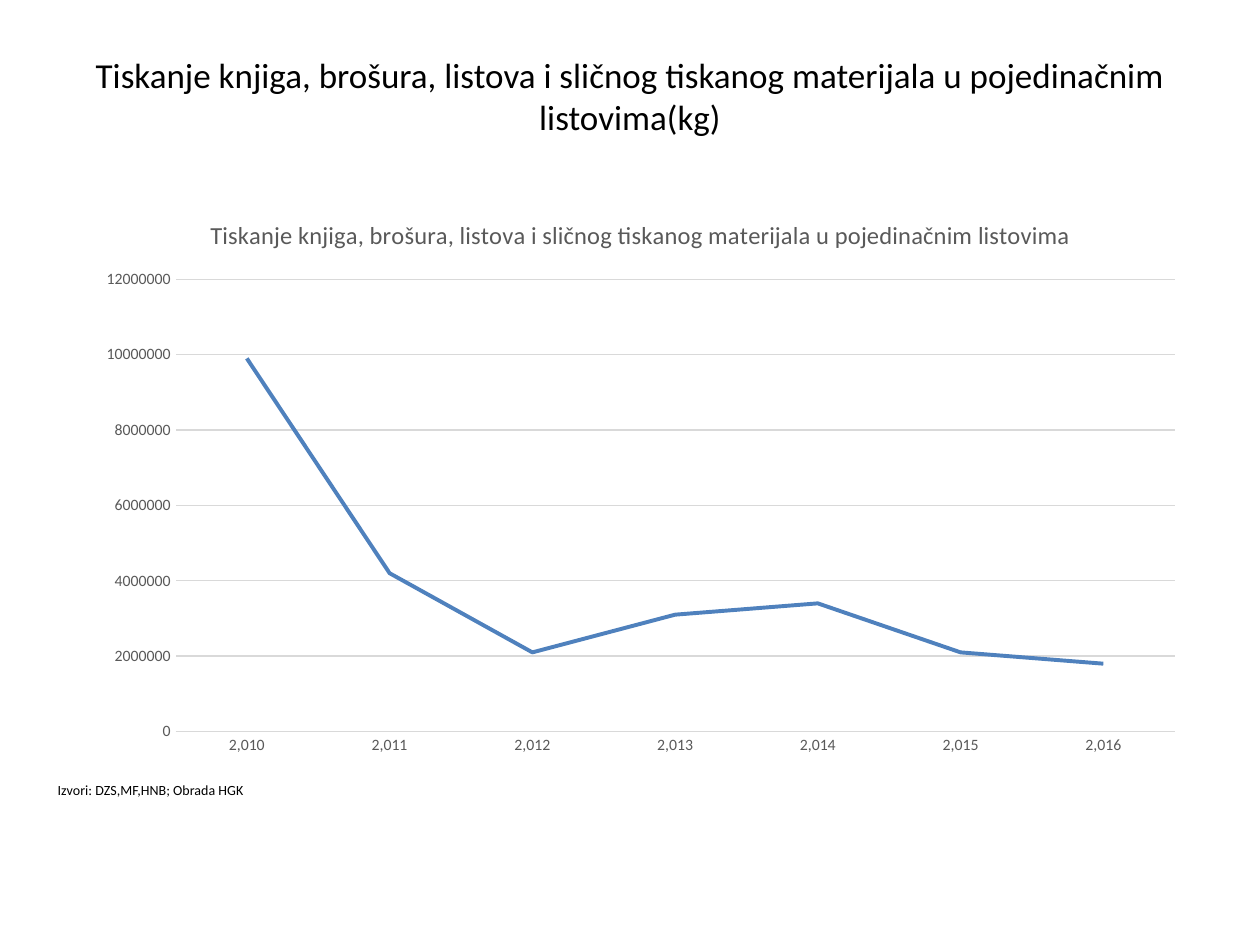
from pptx import Presentation
from pptx.chart.data import CategoryChartData as ChartData
from pptx.dml.color import RGBColor as Rgb
from pptx.enum.chart import XL_CHART_TYPE as Chart, XL_TICK_MARK as Tick
from pptx.enum.text import MSO_ANCHOR as Anchor, MSO_AUTO_SIZE as Fit, PP_ALIGN as Align
from pptx.util import Inches, Pt

COLORS = {"ink": "000000", "label": "595959", "grid": "D9D9D9", "series": "4F81BD"}
TOPIC = "Tiskanje knjiga, brošura, listova i sličnog tiskanog materijala u pojedinačnim listovima"
YEARS = range(2010, 2017)
MASS = [9900000, 4200000, 2100000, 3100000, 3400000, 2100000, 1800000]


class Deck:
    face = "Calibri"

    def __init__(self, wide, high):
        self.prs = Presentation()
        self.prs.slide_width, self.prs.slide_height = Inches(wide), Inches(high)
        self.slide = self.prs.slides.add_slide(self.prs.slide_layouts[5])

    def box(self, x, y, w, h):
        """Turn shares of the slide's size into lengths."""
        wide, high = self.prs.slide_width, self.prs.slide_height
        return int(x * wide), int(y * high), int(w * wide), int(h * high)

    def style(self, font, size, color):
        font.name, font.size, font.bold = self.face, Pt(size), False
        font.color.rgb = Rgb.from_string(COLORS[color])

    def stroke(self, line, color, width):
        line.color.rgb = Rgb.from_string(COLORS[color])
        line.width = Pt(width)

    def title(self, text, area):
        shape = self.slide.shapes.title
        shape.left, shape.top, shape.width, shape.height = self.box(*area)
        frame = shape.text_frame
        frame.text = text
        frame.auto_size = Fit.NONE
        frame.vertical_anchor = Anchor.MIDDLE
        frame.margin_bottom = Inches(0.38)
        para = frame.paragraphs[0]
        para.alignment = Align.CENTER
        self.style(para.font, 20, "ink")

    def note(self, text, area):
        frame = self.slide.shapes.add_textbox(*self.box(*area)).text_frame
        frame.word_wrap = True
        frame.auto_size = Fit.SHAPE_TO_FIT_TEXT
        frame.text = text
        self.style(frame.paragraphs[0].font, 8, "ink")

    def chart(self, name, cats, vals, area):
        data = ChartData(number_format="0")
        data.categories = cats
        data.categories.number_format = "#,##0"
        data.add_series(name, vals)
        chart = self.slide.shapes.add_chart(Chart.LINE, *self.box(*area), data).chart
        self.style(chart.font, 10, "ink")
        chart.has_legend = False
        chart.has_title = True
        head = chart.chart_title.text_frame
        head.text = name
        self.style(head.paragraphs[0].font, 14, "label")

        plot = chart.plots[0]
        plot.vary_by_categories = False
        line = plot.series[0]
        line.smooth = False
        self.stroke(line.format.line, "series", 2.25)

        years, mass = chart.category_axis, chart.value_axis
        for axis, code in ((years, "#,##0"), (mass, "0")):
            axis.major_tick_mark = axis.minor_tick_mark = Tick.NONE
            self.style(axis.tick_labels.font, 9, "label")
            axis.tick_labels.number_format = code
            axis.tick_labels.number_format_is_linked = False
        self.stroke(years.format.line, "grid", 0.75)
        mass.format.line.fill.background()
        mass.minimum_scale, mass.maximum_scale, mass.major_unit = 0, 12000000, 2000000
        mass.has_major_gridlines = True
        self.stroke(mass.major_gridlines.format.line, "grid", 0.75)


def main():
    deck = Deck(10, 7.5)
    deck.title(TOPIC + "(kg)", (0.05, 0.04, 0.9, 1 / 6))
    deck.note("Izvori: DZS,MF,HNB; Obrada HGK", (0.036, 0.82, 0.613, 0.03))
    deck.chart(TOPIC, YEARS, MASS, (0.067, 0.207, 0.883, 0.604))
    deck.prs.save("out.pptx")


if __name__ == "__main__":
    main()
